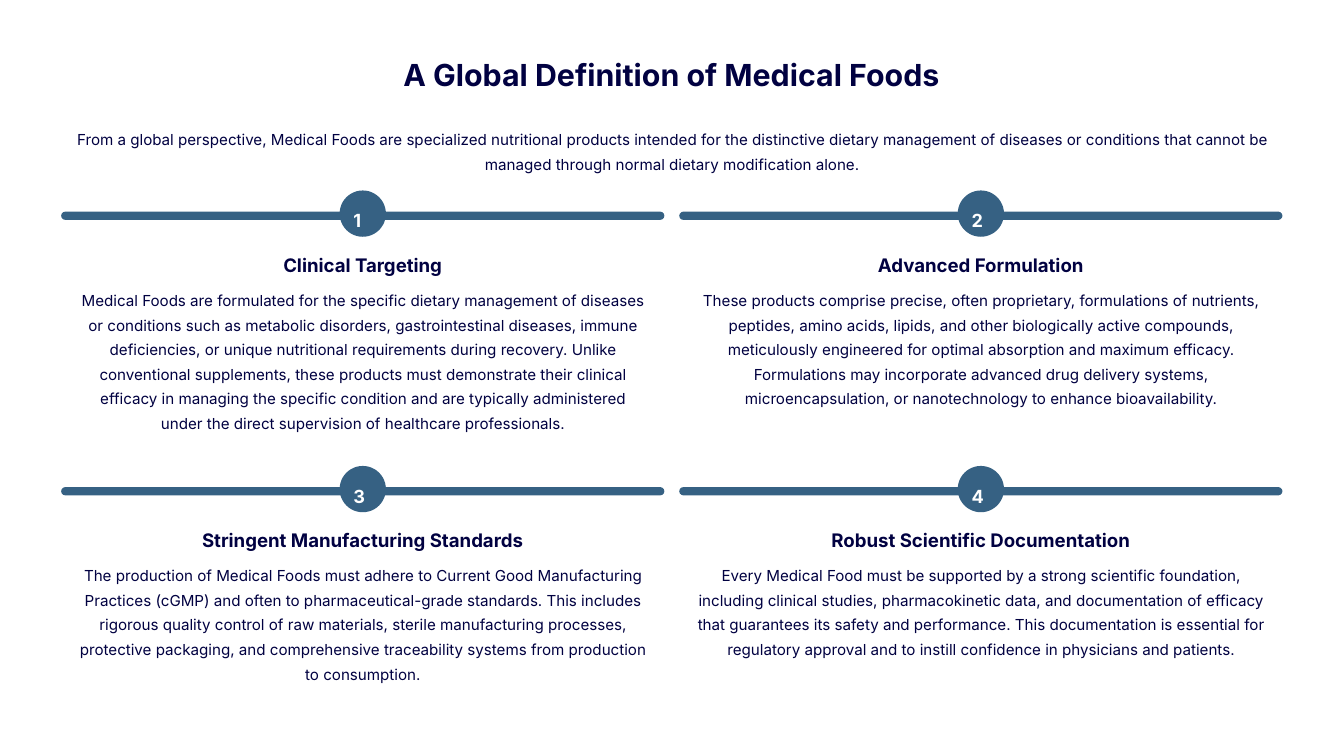
from dataclasses import dataclass

from pptx import Presentation
from pptx.dml.color import RGBColor
from pptx.enum.shapes import MSO_SHAPE as Shape
from pptx.enum.text import PP_ALIGN as Align
from pptx.util import Cm, Pt


@dataclass(frozen=True)
class Theme:
    font: str = "Inter"
    ink: str = "010141"
    accent: str = "366183"
    paper: str = "FFFFFF"
    # Each text style: size, line spacing, bold
    title: tuple = (26, 32.5, True)
    heading: tuple = (16, 20.5, True)
    number: tuple = (15.5, 25, True)
    body: tuple = (13, 21, False)


class SlideBuilder:
    def __init__(self, slide, theme):
        self.slide = slide
        self.theme = theme
        fill = slide.background.fill
        fill.solid()
        fill.fore_color.rgb = RGBColor.from_string(theme.paper)

    def rounded(self, left, top, width, height, color, radius=0.5):
        """Draw a borderless rounded box; radius is a share of the shorter side."""
        box = self.slide.shapes.add_shape(
            Shape.ROUNDED_RECTANGLE, Cm(left), Cm(top), Cm(width), Cm(height))
        box.adjustments[0] = radius
        box.fill.solid()
        box.fill.fore_color.rgb = RGBColor.from_string(color)
        box.line.fill.background()
        box.shadow.inherit = False

    def text(self, words, left, top, width, height, style,
             color=None, align=Align.CENTER, wrap=True):
        size, spacing, bold = style
        frame = self.slide.shapes.add_textbox(
            Cm(left), Cm(top), Cm(width), Cm(height)).text_frame
        frame.margin_left = frame.margin_right = 0
        frame.margin_top = frame.margin_bottom = 0
        frame.word_wrap = wrap
        frame.text = words
        paragraph = frame.paragraphs[0]
        paragraph.alignment = align
        paragraph.line_spacing = Pt(spacing)
        font = paragraph.runs[0].font
        font.name, font.size, font.bold = self.theme.font, Pt(size), bold
        font.color.rgb = RGBColor.from_string(color or self.theme.ink)

    def pillar(self, number, pillar, left, top, height):
        """Draw a card with its top bar, numbered badge, heading and body."""
        theme = self.theme
        heading, heading_width, body_height, body = pillar
        center = left + CARD_WIDTH / 2
        badge_left = center - BADGE / 2
        self.rounded(left, top, CARD_WIDTH, height, theme.paper, 0.04)
        self.rounded(left, top - 0.05, CARD_WIDTH, 0.25, theme.accent)
        self.rounded(badge_left, top - 0.69, BADGE, BADGE, theme.accent)
        self.text(str(number), badge_left + 0.42, top - 0.34, 0.56, 0.69,
                  theme.number, theme.paper, Align.LEFT, wrap=False)
        self.text(heading, center - heading_width / 2, top + 1.17,
                  heading_width, 0.74, theme.heading, wrap=False)
        self.text(body, left + PADDING, top + 2.17,
                  CARD_WIDTH - 2 * PADDING, body_height, theme.body)


SLIDE_WIDTH, SLIDE_HEIGHT = 40.64, 22.86
MARGIN = 1.85
CARD_WIDTH = 18.24
COLUMN_PITCH = 18.69
PADDING = 0.53
BADGE = 1.4
ROWS = [(6.45, 7.16), (14.78, 6.43)]  # card top, card height

TITLE = "A Global Definition of Medical Foods"
INTRO = (
    "From a global perspective, Medical Foods are specialized nutritional products "
    "intended for the distinctive dietary management of diseases or conditions that "
    "cannot be managed through normal dietary modification alone.")

# Heading, heading width, body height, body
PILLARS = [
    ("Clinical Targeting", 5.82, 4.47,
     "Medical Foods are formulated for the specific dietary management of diseases or "
     "conditions such as metabolic disorders, gastrointestinal diseases, immune "
     "deficiencies, or unique nutritional requirements during recovery. Unlike "
     "conventional supplements, these products must demonstrate their clinical efficacy "
     "in managing the specific condition and are typically administered under the direct "
     "supervision of healthcare professionals."),
    ("Advanced Formulation", 6.43, 3.73,
     "These products comprise precise, often proprietary, formulations of nutrients, "
     "peptides, amino acids, lipids, and other biologically active compounds, "
     "meticulously engineered for optimal absorption and maximum efficacy. Formulations "
     "may incorporate advanced drug delivery systems, microencapsulation, or "
     "nanotechnology to enhance bioavailability."),
    ("Stringent Manufacturing Standards", 10.03, 3.73,
     "The production of Medical Foods must adhere to Current Good Manufacturing "
     "Practices (cGMP) and often to pharmaceutical-grade standards. This includes "
     "rigorous quality control of raw materials, sterile manufacturing processes, "
     "protective packaging, and comprehensive traceability systems from production to "
     "consumption."),
    ("Robust Scientific Documentation", 9.32, 3.73,
     "Every Medical Food must be supported by a strong scientific foundation, including "
     "clinical studies, pharmacokinetic data, and documentation of efficacy that "
     "guarantees its safety and performance. This documentation is essential for "
     "regulatory approval and to instill confidence in physicians and patients."),
]


def main():
    deck = Presentation()
    deck.slide_width, deck.slide_height = Cm(SLIDE_WIDTH), Cm(SLIDE_HEIGHT)
    theme = Theme()
    builder = SlideBuilder(deck.slides.add_slide(deck.slide_layouts[6]), theme)

    builder.text(TITLE, 12.09, 1.65, 16.46, 1.17, theme.title, wrap=False)
    builder.text(INTRO, MARGIN, 3.76, SLIDE_WIDTH - 2 * MARGIN, 1.5, theme.body)
    for index, pillar in enumerate(PILLARS):
        row, column = divmod(index, 2)
        top, height = ROWS[row]
        builder.pillar(index + 1, pillar, MARGIN + column * COLUMN_PITCH, top, height)

    deck.save("out.pptx")


if __name__ == "__main__":
    main()
